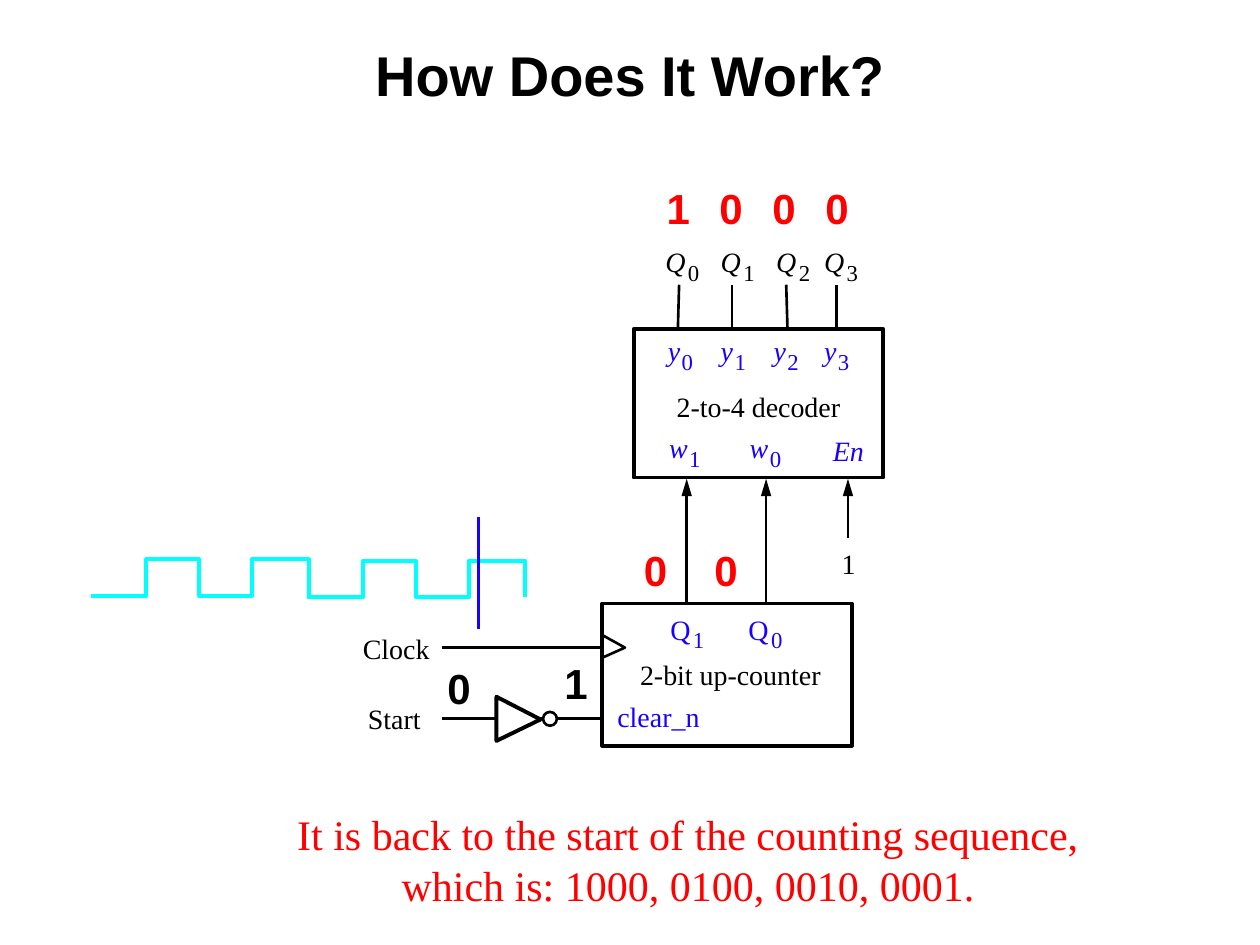
from lxml import etree
from pptx import Presentation
from pptx.dml.color import RGBColor
from pptx.enum.shapes import MSO_CONNECTOR, MSO_SHAPE
from pptx.enum.text import MSO_ANCHOR, PP_ALIGN
from pptx.oxml.ns import qn
from pptx.util import Inches, Pt

STRAIGHT = MSO_CONNECTOR.STRAIGHT
RECTANGLE, OVAL = MSO_SHAPE.RECTANGLE, MSO_SHAPE.OVAL
LEFT, CENTER = PP_ALIGN.LEFT, PP_ALIGN.CENTER
TOP, MIDDLE = MSO_ANCHOR.TOP, MSO_ANCHOR.MIDDLE

BLACK = RGBColor(0x00, 0x00, 0x00)
WHITE = RGBColor(0xFF, 0xFF, 0xFF)
RED = RGBColor(0xFF, 0x00, 0x00)
BLUE = RGBColor(0x17, 0x00, 0xFF)
CYAN = RGBColor(0x00, 0xFF, 0xFF)
SERIF, SANS = "Times New Roman", "Arial"

presentation = Presentation()
presentation.slide_width = Inches(10)
presentation.slide_height = Inches(7.5)
slide = presentation.slides.add_slide(presentation.slide_layouts[5])


def write_text(shape, lines, size, color, font=SERIF, bold=False, italic=False,
               align=LEFT, anchor=TOP, wrap=False):
    """Write lines of text into a shape without inner margins."""
    frame = shape.text_frame
    frame.word_wrap = wrap
    frame.vertical_anchor = anchor
    frame.margin_left = frame.margin_right = frame.margin_top = frame.margin_bottom = 0
    for index, line in enumerate(lines):
        paragraph = frame.add_paragraph() if index else frame.paragraphs[0]
        paragraph.alignment = align
        run = paragraph.add_run()
        run.text = line
        run.font.name = font
        run.font.size = Pt(size)
        run.font.bold = bold
        run.font.italic = italic
        run.font.color.rgb = color


def add_box(left, top, width, height):
    """Add an empty text box, measured in inches."""
    return slide.shapes.add_textbox(Inches(left), Inches(top), Inches(width), Inches(height))


# Title
title = slide.shapes.title
title.left, title.top = Inches(0), Inches(0.25)
title.width, title.height = Inches(10), Inches(0.67)
write_text(title, ["How Does It Work?"], 32, BLACK, SANS, bold=True,
           align=CENTER, anchor=MIDDLE, wrap=True)

# Wires, arrows and the time cursor: x1, y1, x2, y2, color, has arrowhead
wires = [
    (4.78, 5.70, 3.51, 5.70, BLACK, False),
    (3.51, 5.14, 4.78, 5.14, BLACK, False),
    (5.38, 2.61, 5.39, 2.26, BLACK, False),
    (5.81, 2.61, 5.81, 2.26, BLACK, False),
    (6.25, 2.61, 6.24, 2.26, BLACK, False),
    (6.64, 2.61, 6.64, 2.26, BLACK, False),
    (5.45, 4.80, 5.45, 3.80, BLACK, True),
    (6.08, 4.80, 6.08, 3.80, BLACK, True),
    (6.73, 4.27, 6.73, 3.80, BLACK, True),
]
cursor = (3.80, 4.99, 3.80, 4.10, BLUE, False)

# Clock signal: two pieces, each with two pulses
outlines = [
    ([(4.78, 5.22), (4.96, 5.14), (4.78, 5.04)], False, BLACK, 1.5),
    ([(3.94, 5.53), (4.29, 5.71), (3.94, 5.88)], True, BLACK, 2.25),
]
for start, high in [(0.72, 4.44), (2.44, 4.45)]:
    low = high + 0.29
    edges = [start + step for step in (0.44, 0.86, 1.28, 1.73)]
    points = [(start, low)]
    level, other = low, high
    for edge in edges:
        points += [(edge, level), (edge, other)]
        level, other = other, level
    outlines.append((points, False, CYAN, 2.25))

for x1, y1, x2, y2, color, has_arrowhead in wires:
    wire = slide.shapes.add_connector(STRAIGHT, Inches(x1), Inches(y1), Inches(x2), Inches(y2))
    wire.line.color.rgb = color
    wire.line.width = Pt(1.5)
    if has_arrowhead:
        etree.SubElement(wire.line._get_or_add_ln(), qn("a:tailEnd"),
                         type="triangle", w="med", len="lg")
    etree.SubElement(wire._element.spPr, qn("a:effectLst"))

for points, closed, color, width in outlines:
    corners = [(Inches(x), Inches(y)) for x, y in points]
    builder = slide.shapes.build_freeform(*corners[0])
    builder.add_line_segments(corners[1:], close=closed)
    outline = builder.convert_to_shape()
    outline.shadow.inherit = False
    outline.line.color.rgb = color
    outline.line.width = Pt(width)
    if closed:
        outline.fill.solid()
        outline.fill.fore_color.rgb = WHITE
    else:
        outline.fill.background()

x1, y1, x2, y2, color, _ = cursor
time_cursor = slide.shapes.add_connector(STRAIGHT, Inches(x1), Inches(y1), Inches(x2), Inches(y2))
time_cursor.line.color.rgb = color
time_cursor.line.width = Pt(1.5)
etree.SubElement(time_cursor._element.spPr, qn("a:effectLst"))

# Counter, decoder and the inverter bubble
blocks = [
    (RECTANGLE, 4.78, 4.79, 1.98, 1.13, 2.25),
    (RECTANGLE, 5.03, 2.61, 1.98, 1.18, 2.25),
    (OVAL, 4.31, 5.65, 0.11, 0.11, 1.5),
]
for kind, left, top, width, height, weight in blocks:
    block = slide.shapes.add_shape(kind, Inches(left), Inches(top), Inches(width), Inches(height))
    block.shadow.inherit = False
    block.line.color.rgb = BLACK
    block.line.width = Pt(weight)
    if kind == OVAL:
        block.fill.solid()
        block.fill.fore_color.rgb = WHITE
    else:
        block.fill.background()

# Plain labels
labels = [
    ("clear_n", 4.90, 5.55, 0.72, BLUE, False),
    ("2-bit up-counter", 5.08, 5.22, 1.46, BLACK, False),
    ("Start", 2.92, 5.57, 0.43, BLACK, False),
    ("Clock", 2.88, 5.01, 0.53, BLACK, False),
    ("2-to-4 decoder", 5.37, 3.09, 1.31, BLACK, False),
    ("En", 6.61, 3.44, 0.25, BLUE, True),
    ("1", 6.68, 4.34, 0.17, BLACK, False),
]
for text, left, top, width, color, italic in labels:
    write_text(add_box(left, top, width, 0.27), [text], 16, color, italic=italic)

# Signal names: letter, top, color, italic, subscript offset, (index, left) pairs
signals = [
    ("Q", 1.94, BLACK, True, 0.18, [("0", 5.28), ("1", 5.72), ("2", 6.16), ("3", 6.54)]),
    ("y", 2.65, BLUE, True, 0.11, [("0", 5.30), ("1", 5.72), ("2", 6.14), ("3", 6.54)]),
    ("w", 3.42, BLUE, True, 0.16, [("1", 5.31), ("0", 5.95)]),
    ("Q", 4.86, BLUE, False, 0.18, [("1", 5.32), ("0", 5.94)]),
]
for letter, top, color, italic, offset, places in signals:
    for index, left in places:
        write_text(add_box(left, top, 0.22, 0.27), [letter], 16, color, italic=italic)
        write_text(add_box(left + offset, top + 0.11, 0.14, 0.22), [index], 13, color)

# Current signal values: digits, left, top, spacing, color
values = [
    ("1000", 5.29, 1.45, 0.42, RED),
    ("00", 5.11, 4.32, 0.56, RED),
    ("0", 3.55, 5.26, 0, BLACK),
    ("1", 4.48, 5.22, 0, BLACK),
]
for digits, left, top, spacing, color in values:
    for position, digit in enumerate(digits):
        value = add_box(left + position * spacing, top, 0.19, 0.4)
        write_text(value, [digit], 24, color, SANS, bold=True)

# Caption
caption_lines = ["It is back to the start of the counting sequence,",
                 "which is: 1000, 0100, 0010, 0001."]
write_text(add_box(2.16, 6.42, 6.6, 0.81), caption_lines, 24, RED, align=CENTER, wrap=True)

presentation.save("out.pptx")
